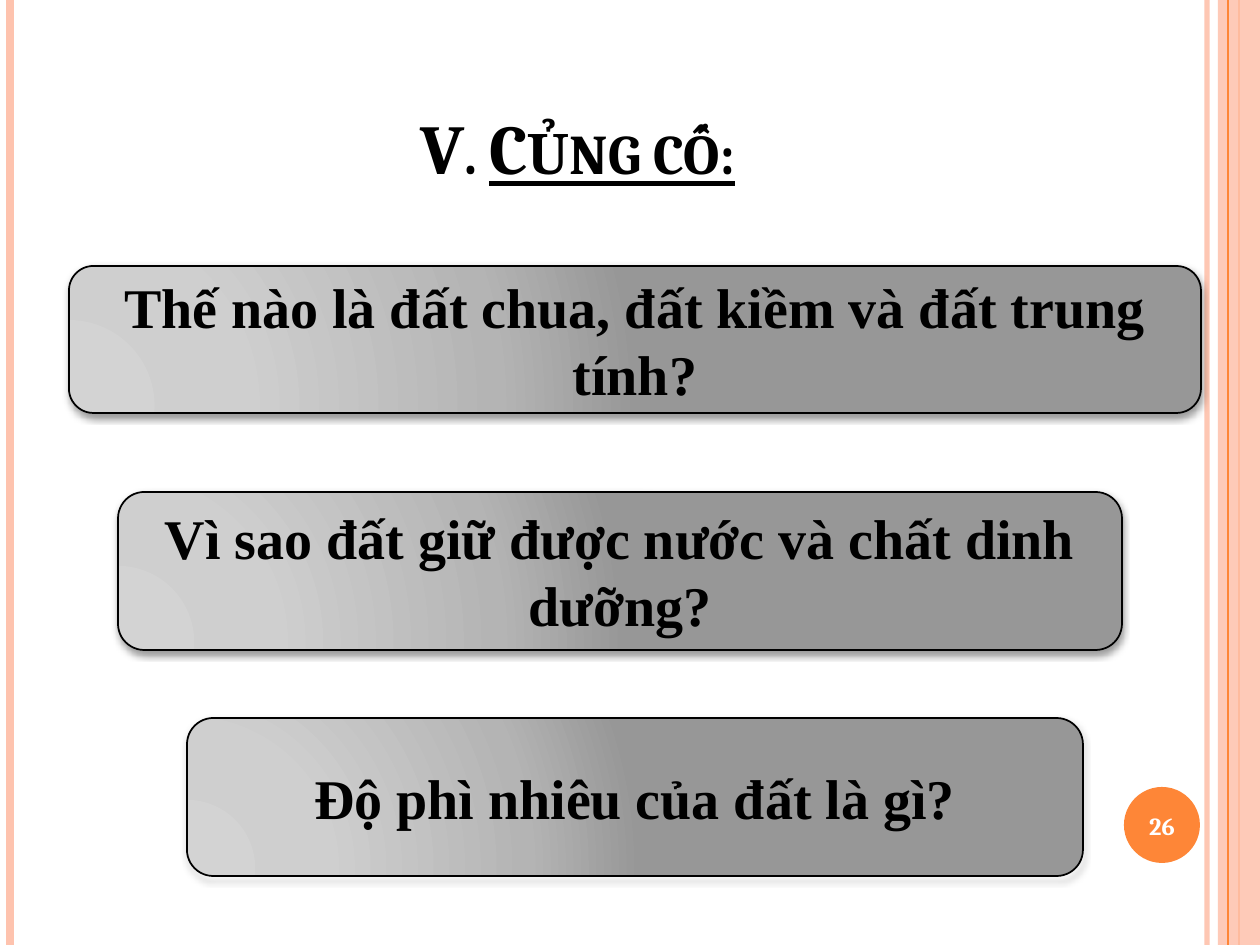
"""Build the review-questions slide."""
from pptx import Presentation
from pptx.dml.color import RGBColor
from pptx.enum.shapes import MSO_CONNECTOR, MSO_SHAPE
from pptx.enum.text import MSO_ANCHOR, MSO_AUTO_SIZE, PP_ALIGN
from pptx.oxml import parse_xml
from pptx.oxml.ns import nsdecls, qn
from pptx.util import Emu, Pt

SCALE = 914400 / 126
W, H = 1260, 945
PEACH, ORANGE, BLACK, WHITE = "FEC3AE", "FE8637", "000000", "FFFFFF"

TITLE = [("V. ", False), ("Củng cố:", True)]
QUESTIONS = [
    ("Thế nào là đất chua, đất kiềm và đất trung tính?", (69, 266, 1132, 147)),
    ("Vì sao đất giữ được nước và chất dinh dưỡng?", (118, 492, 1004, 158)),
    ("Độ phì nhiêu của đất là gì?", (187, 718, 896, 158)),
]
RULES = [(1207, PEACH, 3, 93), (10, PEACH, 4.5, 100),
         (1239, ORANGE, 1.5, 100), (1228, ORANGE, 0.75, 100)]
STOPS = [(0, "D3D3D3"), (30, "CFCFCF"), (75, "B4B4B4"), (100, "979797")]
PAGE = "26"


def px(*values):
    return [Emu(round(v * SCALE)) for v in values]


def rgb(value):
    return RGBColor.from_string(value)


def set_alpha(fill_owner, percent):
    color = next(fill_owner.iter(qn("a:srgbClr")))
    color.append(parse_xml(f'<a:alpha {nsdecls("a")} val="{percent * 1000}"/>'))


def add_rule(s, x, color, width, alpha):
    line = s.shapes.add_connector(MSO_CONNECTOR.STRAIGHT, *px(x, 0, x, H))
    line.line.color.rgb = rgb(color)
    line.line.width = Pt(width)
    props = line._element.spPr
    if alpha < 100:
        set_alpha(props, alpha)
    props.append(parse_xml(f'<a:effectLst {nsdecls("a")}/>'))


def add_shape(s, kind, box, color):
    sp = s.shapes.add_shape(kind, *px(*box))
    sp.shadow.inherit = False
    sp.fill.solid()
    sp.fill.fore_color.rgb = rgb(color)
    sp.line.fill.background()
    return sp


def add_run(p, text, size, font, color):
    r = p.add_run()
    r.text = text
    r.font.size = Pt(size)
    r.font.name = font
    r.font.bold = True
    r.font.color.rgb = rgb(color)
    return r


def set_text(sp, text, size, font, color):
    tf = sp.text_frame
    tf.word_wrap = True
    tf.vertical_anchor = MSO_ANCHOR.MIDDLE
    p = tf.paragraphs[0]
    p.alignment = PP_ALIGN.CENTER
    add_run(p, text, size, font, color)


def add_question(s, text, box):
    sp = add_shape(s, MSO_SHAPE.ROUNDED_RECTANGLE, box, STOPS[-1][1])
    sp.line.color.rgb = rgb(BLACK)
    sp.line.width = Pt(1)
    props = sp._element.spPr
    stops = "".join(f'<a:gs pos="{pos * 1000}"><a:srgbClr val="{color}"/></a:gs>'
                    for pos, color in STOPS)
    props.replace(props.find(qn("a:solidFill")), parse_xml(
        f'<a:gradFill {nsdecls("a")} rotWithShape="1"><a:gsLst>{stops}</a:gsLst>'
        '<a:path path="circle"><a:fillToRect l="5000" t="100000" r="120000" b="10000"/>'
        '</a:path></a:gradFill>'))
    props.find(qn("a:effectLst")).append(parse_xml(
        f'<a:outerShdw {nsdecls("a")} blurRad="{Pt(4)}" dist="{Pt(2)}" dir="5400000" '
        f'rotWithShape="0"><a:srgbClr val="{BLACK}"><a:alpha val="40000"/></a:srgbClr>'
        '</a:outerShdw>'))
    set_text(sp, text, 32, "Times New Roman", BLACK)


def add_title(s):
    title = s.shapes.title
    title.left, title.top, title.width, title.height = px(63, 38, 1029, 157)
    tf = title.text_frame
    tf.word_wrap = True
    tf.auto_size = MSO_AUTO_SIZE.NONE
    tf.vertical_anchor = MSO_ANCHOR.BOTTOM
    p = tf.paragraphs[0]
    p.alignment = PP_ALIGN.CENTER
    for text, underlined in TITLE:
        r = add_run(p, text, 40, "Cambria", BLACK)
        r.font.underline = underlined
        r.font._element.set("cap", "small")


def main():
    prs = Presentation()
    prs.slide_width, prs.slide_height = px(W, H)
    s = prs.slides.add_slide(prs.slide_layouts[5])
    for rule in RULES[:3]:
        add_rule(s, *rule)
    band = add_shape(s, MSO_SHAPE.RECTANGLE, (1218, 0, 42, H), PEACH)
    set_alpha(band._element.spPr, 87)
    add_rule(s, *RULES[3])
    add_shape(s, MSO_SHAPE.OVAL, (1124, 787, 76, 76), ORANGE)
    add_title(s)
    for text, box in QUESTIONS:
        add_question(s, text, box)
    number = s.shapes.add_textbox(*px(1120, 790, 84, 72))
    set_text(number, PAGE, 14, "Cambria", WHITE)
    prs.save("out.pptx")


if __name__ == "__main__":
    main()
